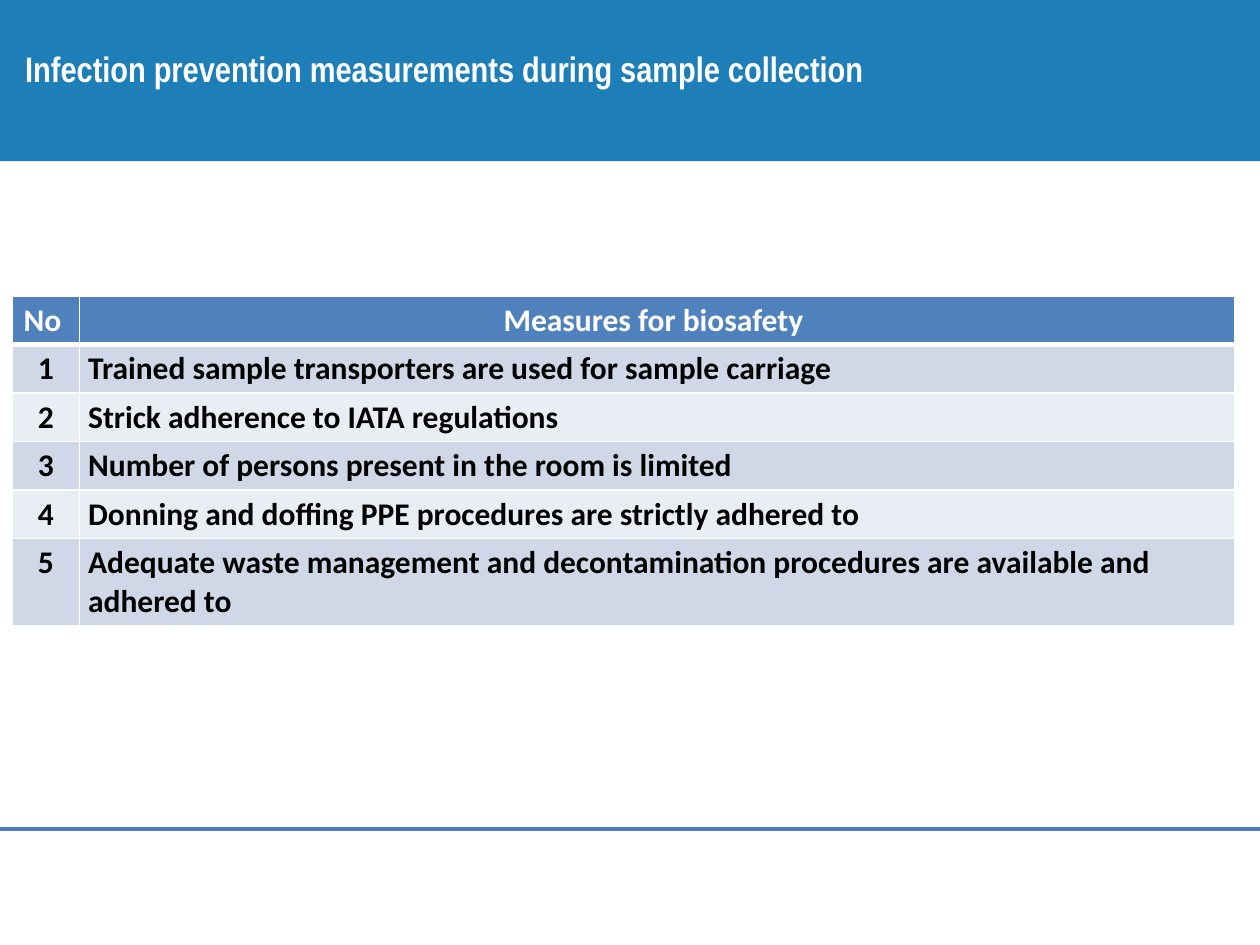
from lxml import etree
from pptx import Presentation
from pptx.dml.color import RGBColor
from pptx.enum.shapes import MSO_CONNECTOR, MSO_SHAPE
from pptx.enum.text import MSO_ANCHOR, PP_ALIGN
from pptx.oxml import parse_xml
from pptx.oxml.ns import nsdecls, qn
from pptx.util import Inches, Pt

BLUE, WHITE, BLACK = "1E7FB8", "FFFFFF", "000000"
HEADER_FILL, BAND_FILLS = "4F81BD", ("D0D8E8", "E9EDF4")
HEADINGS = ("No ", "Measures for biosafety ")
MEASURES = (
    "Trained sample transporters are used for sample carriage",
    "Strick adherence to IATA regulations",
    "Number of persons present in the room is limited",
    "Donning and doffing PPE procedures are strictly adhered to",
    "Adequate waste management and decontamination procedures are available and adhered to",
)


def colour(value):
    return RGBColor.from_string(value)


def write(para, text, font_colour, align=PP_ALIGN.LEFT, **font):
    """Add one formatted run to the paragraph."""
    para.alignment = align
    span = para.add_run()
    span.text = text
    for name, value in font.items():
        setattr(span.font, name, value)
    span.font.color.rgb = colour(font_colour)


def place(shape, left, top, width, height):
    shape.left, shape.top = Inches(left), Inches(top)
    shape.width, shape.height = Inches(width), Inches(height)


def add_title_band(page, left, top, width, height):
    band = page.shapes.add_shape(MSO_SHAPE.RECTANGLE, 0, 0, 0, 0)
    place(band, left, top, width, height)
    band.shadow.inherit = False
    band.fill.solid()
    band.fill.fore_color.rgb = colour(BLUE)
    band.line.fill.background()

    title = page.shapes.title
    place(title, left + 0.1, 0, width, 1.09)
    title.text_frame.vertical_anchor = MSO_ANCHOR.MIDDLE
    write(title.text_frame.paragraphs[0],
          "Infection prevention measurements during sample collection",
          WHITE, name="Arial Narrow", size=Pt(20.2), bold=True)
    band._element.addnext(title._element)  # bring the title in front of the band


def set_borders(cell, bottom):
    """White cell borders of 1 pt, with a bottom border of the given points."""
    widths = {"lnL": 1, "lnR": 1, "lnT": 1, "lnB": bottom}
    properties = cell._tc.get_or_add_tcPr()
    for index, (tag, points) in enumerate(widths.items()):
        properties.insert(index, parse_xml(
            f'<a:{tag} {nsdecls("a")} w="{Pt(points)}"><a:solidFill>'
            f'<a:srgbClr val="{WHITE}"/></a:solidFill></a:{tag}>'))


def fill_cell(cell, text, fill, font_colour, align, bottom=1):
    cell.margin_left = cell.margin_right = Inches(0.07)
    cell.margin_top = cell.margin_bottom = Inches(0.04)
    cell.fill.solid()
    cell.fill.fore_color.rgb = colour(fill)
    set_borders(cell, bottom)
    write(cell.text_frame.paragraphs[0], text, font_colour, align,
          name="Calibri", size=Pt(18), bold=True)


def add_measures_table(page, left, top, width, height):
    number_width, row_height = 0.53, 0.38
    table = page.shapes.add_table(len(MEASURES) + 1, 2, Inches(left), Inches(top),
                                  Inches(width), Inches(height)).table
    table.columns[0].width = Inches(number_width)
    table.columns[1].width = Inches(width - number_width)
    for row in table.rows:
        row.height = Inches(row_height)
    table.rows[len(MEASURES)].height = Inches(height - row_height * len(MEASURES))

    for column, heading in enumerate(HEADINGS):
        fill_cell(table.cell(0, column), heading, HEADER_FILL, WHITE,
                  PP_ALIGN.CENTER, bottom=3)
    for number, measure in enumerate(MEASURES, 1):
        fill = BAND_FILLS[(number - 1) % 2]
        fill_cell(table.cell(number, 0), str(number), fill, BLACK, PP_ALIGN.CENTER)
        fill_cell(table.cell(number, 1), measure, fill, BLACK, PP_ALIGN.LEFT)


def add_footer_rule(page, left, top, width):
    rule = page.shapes.add_connector(MSO_CONNECTOR.STRAIGHT, Inches(left), Inches(top),
                                     Inches(left + width), Inches(top))
    rule.line.color.rgb = colour("4B7EBC")
    rule.line.width = Pt(2)
    etree.SubElement(rule._element.spPr, qn("a:effectLst"))


def main():
    deck = Presentation()
    deck.slide_width, deck.slide_height = Inches(10), Inches(7.5)
    page = deck.slides.add_slide(deck.slide_layouts[5])
    add_title_band(page, 0, -0.03, 10, 1.31)
    add_footer_rule(page, 0, 6.58, 10)
    add_measures_table(page, 0.1, 2.35, 9.7, 2.58)
    deck.save("out.pptx")


if __name__ == "__main__":
    main()
